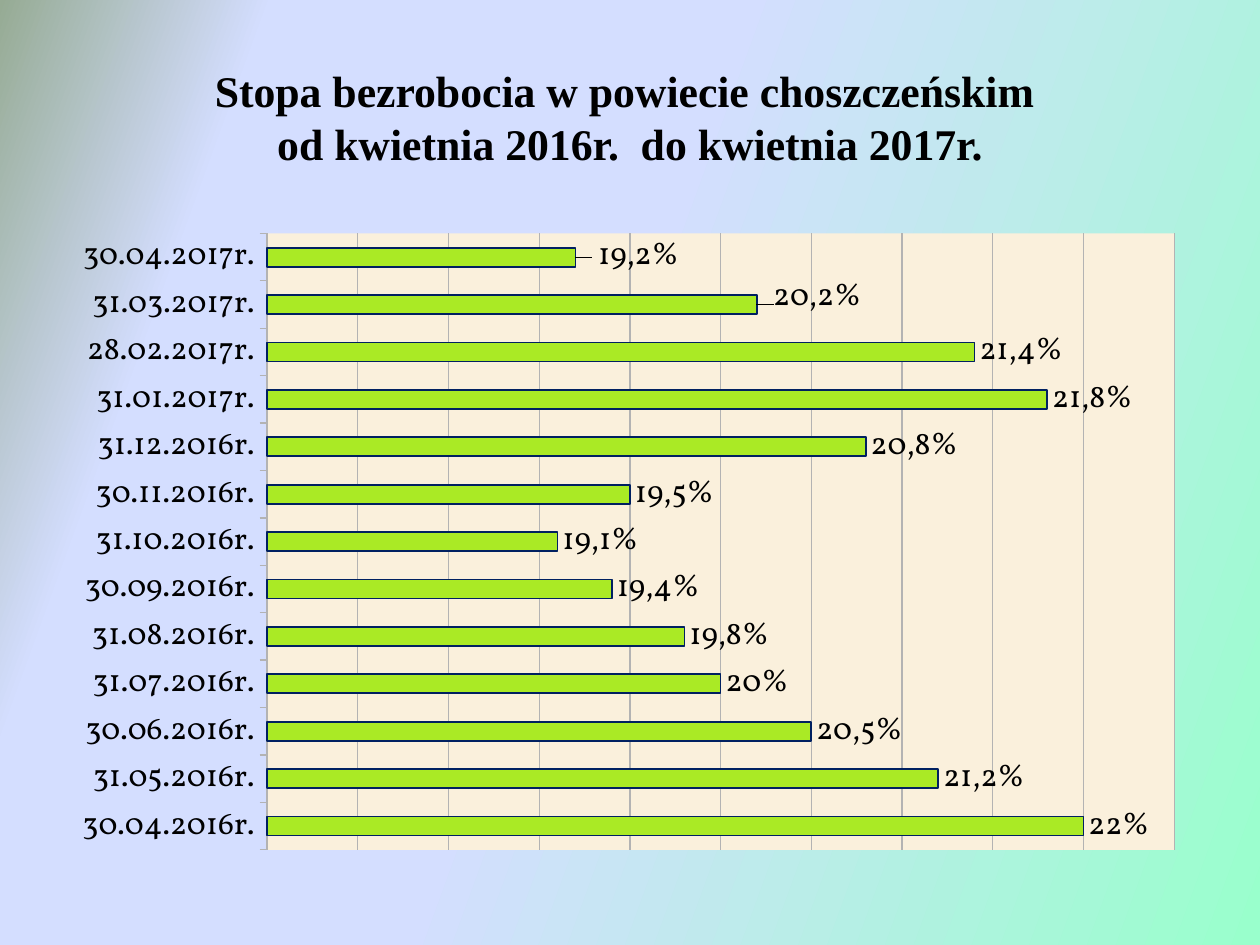
import pptx
import pptx.chart.data
import pptx.dml.color
import pptx.enum.chart
import pptx.enum.text
import pptx.oxml
import pptx.oxml.ns
import pptx.util
from pptx.util import Inches

STOPS = [(0, "99FFCC"), (54, "D4DEFF"), (83, "D4DEFF"), (100, "96AB94")]
TITLE = ["Stopa bezrobocia w powiecie choszczeńskim ",
         "od kwietnia 2016r.  do kwietnia 2017r."]
RATES = [
    ("30.04.2016r.", 22, "22%"),
    ("31.05.2016r.", 21.2, "21,2%"),
    ("30.06.2016r.", 20.5, "20,5%"),
    ("31.07.2016r.", 20, "20%"),
    ("31.08.2016r.", 19.8, "19,8%"),
    ("30.09.2016r.", 19.4, "19,4%"),
    ("31.10.2016r.", 19.1, "19,1%"),
    ("30.11.2016r.", 19.5, "19,5%"),
    ("31.12.2016r.", 20.8, "20,8%"),
    ("31.01.2017r.", 21.8, "21,8%"),
    ("28.02.2017r.", 21.4, "21,4%"),
    ("31.03.2017r.", 20.2, "20,2%"),
    ("30.04.2017r.", 19.2, " 19,2%"),
]
SHIFTS = {11: {"x": 0.01, "y": -0.01}, 12: {"x": 0.01, "y": 0}}
PLOT = {"x": 0.18, "y": 0.02, "w": 0.8, "h": 0.95}


def rgb(code):
    return pptx.dml.color.RGBColor.from_string(code)


def style(font, face, size, code, bold=False):
    font.name = face
    font.size = pptx.util.Pt(size)
    font.bold = bold
    font.color.rgb = rgb(code)


def paint(part, code):
    part.fill.solid()
    part.fill.fore_color.rgb = rgb(code)


def rule(line, code, width):
    line.color.rgb = rgb(code)
    line.width = pptx.util.Pt(width)


def layout(sizes, modes=""):
    space = pptx.oxml.ns.nsdecls("c")
    parts = "".join(f'<c:{key} val="{val}"/>' for key, val in sizes.items())
    return pptx.oxml.parse_xml(
        f"<c:layout {space}><c:manualLayout>{modes}{parts}"
        "</c:manualLayout></c:layout>")


def place(node, sizes, spot, modes=""):
    for old in node.findall(pptx.oxml.ns.qn("c:layout")):
        node.remove(old)
    node.insert(spot, layout(sizes, modes))


def backdrop(slide):
    fill = slide.background.fill
    fill.gradient()
    fill.gradient_angle = 160
    stops = slide.element.find(".//" + pptx.oxml.ns.qn("a:gsLst"))
    for old in list(stops):
        stops.remove(old)
    space = pptx.oxml.ns.nsdecls("a")
    for spot, code in STOPS:
        stops.append(pptx.oxml.parse_xml(
            f'<a:gs {space} pos="{spot * 1000}"><a:srgbClr val="{code}"/></a:gs>'))


def heading(slide, left, top, width, height):
    frame = slide.shapes.add_textbox(left, top, width, height).text_frame
    frame.word_wrap = True
    frame.vertical_anchor = pptx.enum.text.MSO_ANCHOR.MIDDLE
    para = frame.paragraphs[0]
    para.alignment = pptx.enum.text.PP_ALIGN.CENTER
    for row, text in enumerate(TITLE):
        if row:
            para.add_line_break()
        run = para.add_run()
        run.text = text
        style(run.font, "Times New Roman", 25, "000000", True)


def axes(chart):
    dates, scale = chart.category_axis, chart.value_axis
    style(dates.tick_labels.font, "Vollkorn", 18, "000000")
    dates.major_tick_mark = pptx.enum.chart.XL_TICK_MARK.OUTSIDE
    dates.has_major_gridlines = False
    rule(dates.format.line, "B3B3B3", 0.75)
    scale.minimum_scale = 17.5
    scale.maximum_scale = 22.5
    scale.major_unit = 0.5
    scale.has_major_gridlines = True
    rule(scale.major_gridlines.format.line, "B3B3B3", 0.75)
    scale.visible = False


def labels(series):
    marks = series.data_labels
    marks.show_value = True
    marks.position = pptx.enum.chart.XL_LABEL_POSITION.OUTSIDE_END
    style(marks.font, "Vollkorn", 18, "000000")
    for spot, (date, rate, text) in enumerate(RATES):
        label = series.points[spot].data_label
        run = label.text_frame.paragraphs[0].add_run()
        run.text = text
        style(run.font, "Vollkorn", 18, "000000")
        label.position = pptx.enum.chart.XL_LABEL_POSITION.OUTSIDE_END
    for node in marks._element.findall(pptx.oxml.ns.qn("c:dLbl")):
        spot = node.find(pptx.oxml.ns.qn("c:idx")).val
        if spot in SHIFTS:
            place(node, SHIFTS[spot], 1)


def bars(slide, left, top, width, height):
    data = pptx.chart.data.CategoryChartData()
    data.categories = [date for date, rate, text in RATES]
    data.add_series("Series 1", [rate for date, rate, text in RATES])
    chart = slide.shapes.add_chart(
        pptx.enum.chart.XL_CHART_TYPE.BAR_CLUSTERED,
        left, top, width, height, data).chart
    chart.has_title = False
    chart.has_legend = False
    style(chart.font, "Vollkorn", 18, "000000")
    axes(chart)
    plot = chart.plots[0]
    plot.gap_width = 150
    plot.vary_by_categories = False
    series = plot.series[0]
    paint(series.format, "AAEA25")
    rule(series.format.line, "002060", 1)
    labels(series)
    area = chart._chartSpace.chart.plotArea
    place(area, PLOT, 0,
          '<c:layoutTarget val="inner"/><c:xMode val="edge"/><c:yMode val="edge"/>')
    space = pptx.oxml.ns.nsdecls("c", "a")
    area.append(pptx.oxml.parse_xml(
        f'<c:spPr {space}><a:solidFill><a:srgbClr val="FAF0DC"/>'
        "</a:solidFill></c:spPr>"))


def main():
    deck = pptx.Presentation()
    deck.slide_width, deck.slide_height = Inches(10), Inches(7.5)
    slide = deck.slides.add_slide(deck.slide_layouts[6])
    backdrop(slide)
    heading(slide, Inches(0.5), Inches(0.3), Inches(9), Inches(1.25))
    bars(slide, Inches(0.5), Inches(1.75), Inches(9), Inches(5.15))
    deck.save("out.pptx")


if __name__ == "__main__":
    main()
